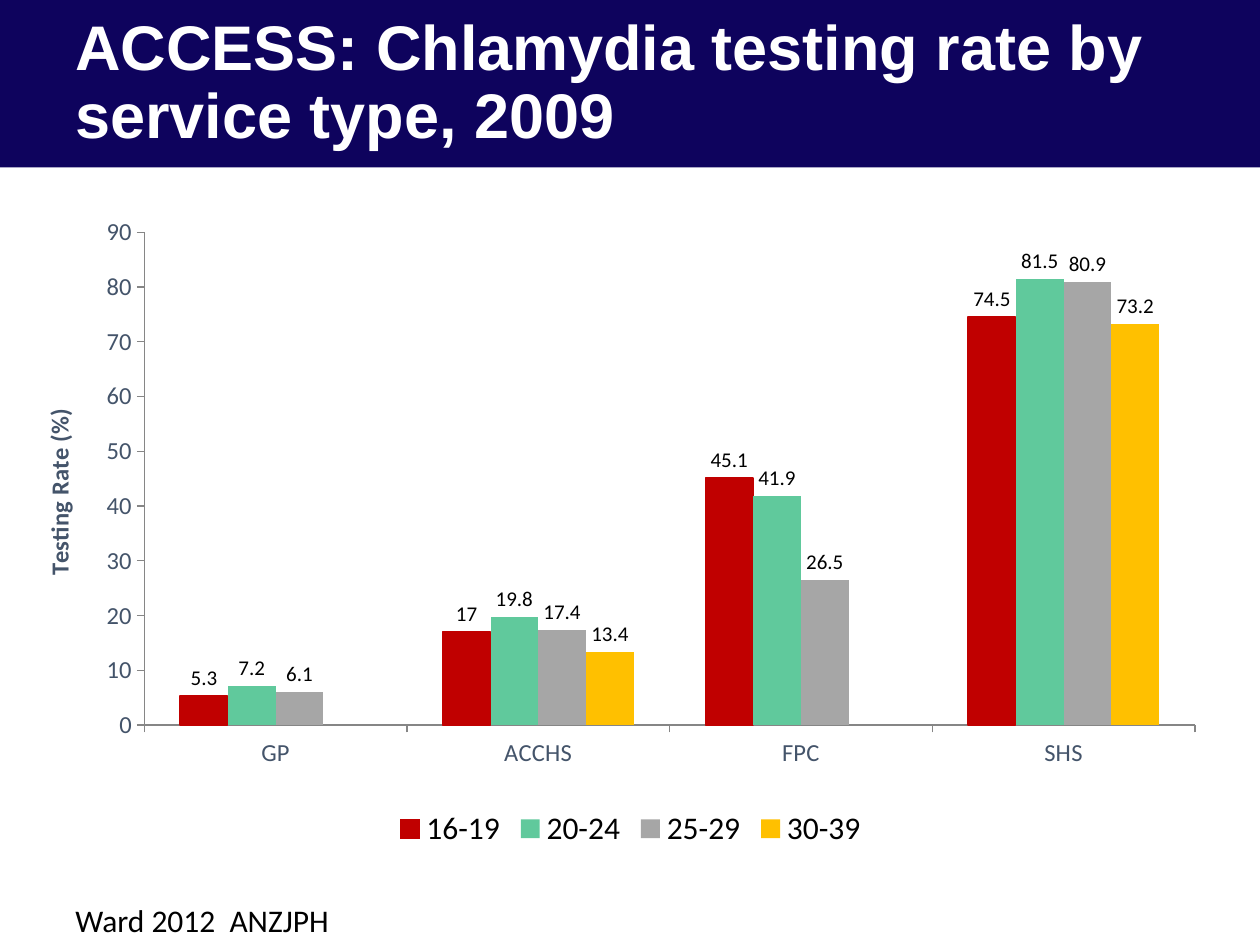
import pptx
import pptx.util
import pptx.chart.data
import pptx.dml.color
import pptx.enum.chart
import pptx.enum.shapes
import pptx.enum.text
import pptx.oxml

Pt = pptx.util.Pt
Enum = pptx.enum.chart

HUES = {"navy": "0E035D", "white": "FFFFFF", "black": "000000",
        "slate": "44546A", "axis": "868686", "red": "C00000",
        "green": "60C99C", "grey": "A6A6A6", "gold": "FFC000"}

GROUPS = ["GP", "ACCHS", "FPC", "SHS"]
AGES = [("16-19", "red", (5.3, 17, 45.1, 74.5)),
        ("20-24", "green", (7.2, 19.8, 41.9, 81.5)),
        ("25-29", "grey", (6.1, 17.4, 26.5, 80.9)),
        ("30-39", "gold", (None, 13.4, None, 73.2))]


class Deck:
    def __init__(self, wide, high):
        self.prs = pptx.Presentation()
        self.prs.slide_width = pptx.util.Inches(wide)
        self.prs.slide_height = pptx.util.Inches(high)
        self.slide = self.prs.slides.add_slide(self.prs.slide_layouts[6])
        self.body = "Calibri"

    def area(self, left, top, width, height):
        """Turn shares of the slide's size into lengths."""
        w, h = self.prs.slide_width, self.prs.slide_height
        return [round(n) for n in (left * w, top * h, width * w, height * h)]

    def rgb(self, hue):
        return pptx.dml.color.RGBColor.from_string(HUES[hue])

    def style(self, font, size, hue, bold=False, face=None):
        font.name, font.size, font.bold = face or self.body, Pt(size), bold
        font.color.rgb = self.rgb(hue)

    def band(self, area, hue):
        kind = pptx.enum.shapes.MSO_SHAPE.RECTANGLE
        shape = self.slide.shapes.add_shape(kind, *self.area(*area))
        shape.shadow.inherit = False
        shape.fill.solid()
        shape.fill.fore_color.rgb = self.rgb(hue)
        shape.line.fill.background()

    def text(self, area, words, size, hue, bold=False, face=None,
             wrap=True, lead=1.0):
        frame = self.slide.shapes.add_textbox(*self.area(*area)).text_frame
        frame.text = words
        frame.word_wrap = wrap
        frame.vertical_anchor = pptx.enum.text.MSO_ANCHOR.MIDDLE
        if not wrap:
            frame.auto_size = pptx.enum.text.MSO_AUTO_SIZE.SHAPE_TO_FIT_TEXT
        para = frame.paragraphs[0]
        para.line_spacing = lead
        self.style(para.runs[0].font, size, hue, bold, face)

    def axis(self, axis, size, hue):
        axis.has_major_gridlines = False
        axis.major_tick_mark = Enum.XL_TICK_MARK.OUTSIDE
        axis.format.line.color.rgb = self.rgb("axis")
        axis.format.line.width = Pt(0.75)
        self.style(axis.tick_labels.font, size, hue)

    def columns(self, area, groups, sets, title, plot):
        data = pptx.chart.data.CategoryChartData()
        data.categories = groups
        for name, _, vals in sets:
            data.add_series(name, vals)
        chart = self.slide.shapes.add_chart(
            Enum.XL_CHART_TYPE.COLUMN_CLUSTERED, *self.area(*area), data).chart
        chart.has_title = False
        self.style(chart.font, 10, "black")
        for axis in (chart.category_axis, chart.value_axis):
            self.axis(axis, 14, "slate")
        scale = chart.value_axis
        scale.minimum_scale, scale.maximum_scale, scale.major_unit = 0, 90, 10
        scale.axis_title.text_frame.text = title
        run = scale.axis_title.text_frame.paragraphs[0].runs[0]
        self.style(run.font, 14, "slate", bold=True)

        chart.has_legend = True
        chart.legend.position = Enum.XL_LEGEND_POSITION.BOTTOM
        chart.legend.include_in_layout = False
        self.style(chart.legend.font, 18, "black")

        bars = chart.plots[0]
        bars.gap_width, bars.overlap = 150, 0
        bars.vary_by_categories = False
        for index, (series, (_, hue, _)) in enumerate(zip(bars.series, sets)):
            series.format.fill.solid()
            series.format.fill.fore_color.rgb = self.rgb(hue)
            if index == 0:
                series.format.line.color.rgb = self.rgb(hue)
                series.format.line.width = Pt(0.75)
            labels = series.data_labels
            labels.show_value = True
            labels.position = Enum.XL_LABEL_POSITION.OUTSIDE_END
            self.style(labels.font, 12, "black")
        self.place(chart, plot)

    def place(self, chart, plot):
        """Fix the inner plot area at shares of the chart's size."""
        space = "http://schemas.openxmlformats.org/drawingml/2006/chart"
        rules = [("layoutTarget", "inner"), ("xMode", "edge"),
                 ("yMode", "edge"), *zip("xywh", plot)]
        inner = "".join(f'<c:{tag} val="{val}"/>' for tag, val in rules)
        layout = pptx.oxml.parse_xml(
            f'<c:layout xmlns:c="{space}"><c:manualLayout>{inner}'
            '</c:manualLayout></c:layout>')
        root = chart.element.find(f".//{{{space}}}plotArea")
        for old in root.findall(f"{{{space}}}layout"):
            root.remove(old)
        root.insert(0, layout)


def main():
    deck = Deck(10, 7.5)
    head = 1.33 / 7.5
    deck.band((0, 0, 1, head), "navy")
    deck.text((0.05, 0, 0.9, head),
              "ACCESS: Chlamydia testing rate by service type, 2009",
              36, "white", bold=True, face="Arial", lead=0.9)
    deck.columns((0.024, 0.2, 0.953, 5.28 / 7.5), GROUPS, AGES,
                 "Testing Rate (%)", (0.095, 0.065, 0.875, 0.741))
    deck.text((0.05, 7.1 / 7.5, 0.229, 0.4 / 7.5), "Ward 2012  ANZJPH",
              18, "black", wrap=False)
    deck.prs.save("out.pptx")


if __name__ == "__main__":
    main()
